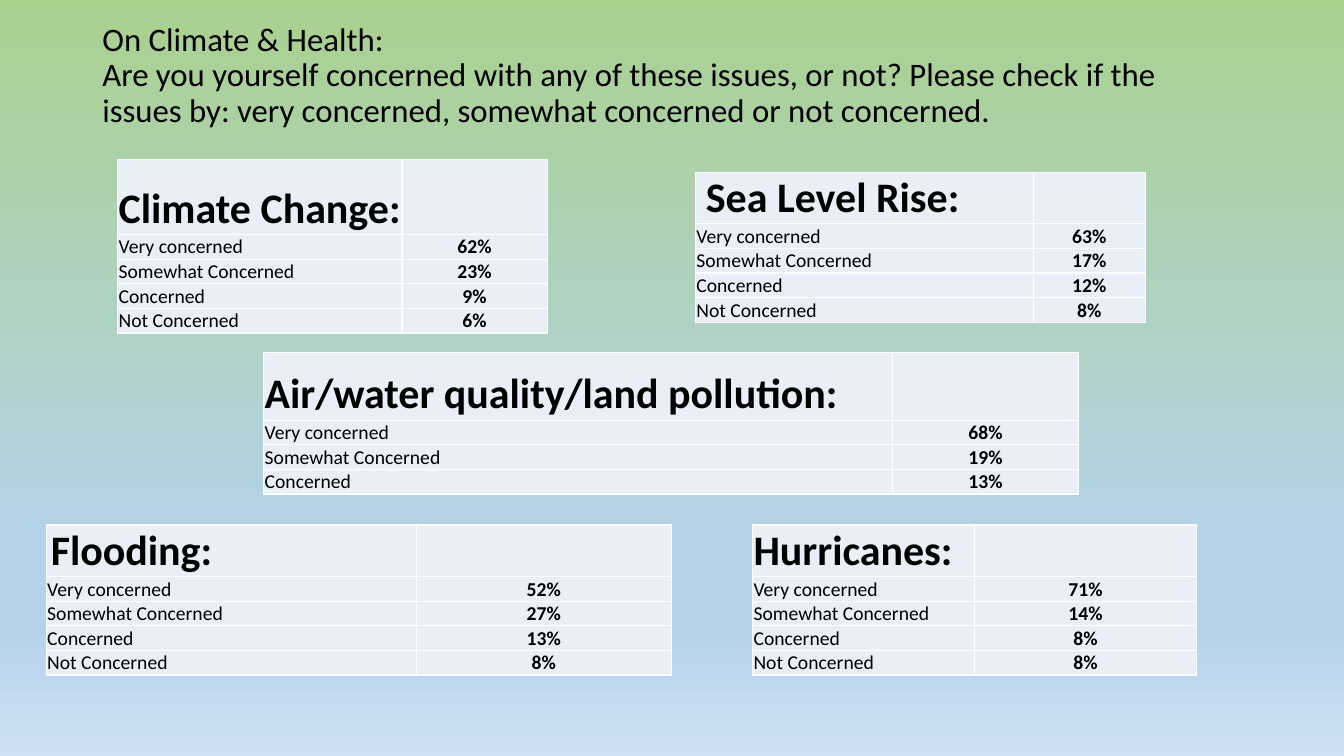
from copy import deepcopy
from lxml import etree
from pptx import Presentation
from pptx.dml.color import RGBColor
from pptx.enum.text import MSO_ANCHOR, PP_ALIGN
from pptx.oxml.ns import qn
from pptx.util import Cm, Pt

LEFT, MID = PP_ALIGN.LEFT, PP_ALIGN.CENTER
BASE, CENTER = MSO_ANCHOR.BOTTOM, MSO_ANCHOR.MIDDLE
COLORS = {"ink": "000000", "cell": "EAEFF7", "edge": "FFFFFF",
          "green": "A9D18E", "blue": "B5D2EC", "pale": "CEE1F2"}
ROW = 0.62


def write(frame, text, size=14, bold=False, align=LEFT, space=1.0):
    para = frame.paragraphs[0]
    para.text = text
    para.alignment = align
    para.line_spacing = space
    for run in para.runs:
        run.font.name = "Calibri"
        run.font.size = Pt(size)
        run.font.bold = bold
        run.font.color.rgb = RGBColor.from_string(COLORS["ink"])


def style(cell):
    cell.margin_left = cell.margin_right = cell.margin_top = Cm(0.02)
    cell.margin_bottom = Cm(0)
    cell.vertical_anchor = BASE
    props = cell._tc.get_or_add_tcPr()
    for side in ("lnL", "lnR", "lnT", "lnB"):
        line = etree.SubElement(props, qn("a:" + side), w=str(Pt(1)))
        paint = etree.SubElement(line, qn("a:solidFill"))
        etree.SubElement(paint, qn("a:srgbClr"), val=COLORS["edge"])
    cell.fill.solid()
    cell.fill.fore_color.rgb = RGBColor.from_string(COLORS["cell"])


deck = Presentation()
deck.slide_width, deck.slide_height = Cm(33.87), Cm(19.05)
slide = deck.slides.add_slide(deck.slide_layouts[6])

fill = slide.background.fill
fill.gradient()
fill.gradient_angle = 270
stops = slide._element.find(".//" + qn("a:gsLst"))
for _ in range(2):
    stops.append(deepcopy(stops[0]))
shades = [(0, "green"), (0.74, "blue"), (0.83, "blue"), (1, "pale")]
for stop, (place, name) in zip(fill.gradient_stops, shades):
    stop.position = place
    stop.color.rgb = RGBColor.from_string(COLORS[name])

title = slide.shapes.add_textbox(Cm(2.33), Cm(1.02), Cm(29.21), Cm(1.8))
title.text_frame.word_wrap = True
title.text_frame.vertical_anchor = CENTER
write(title.text_frame,
      "On Climate & Health:\vAre you yourself concerned with any of these "
      "issues, or not? Please check if the issues by: very concerned, "
      "somewhat concerned or not concerned.", size=23.4, space=0.9)

LEVELS = ["Very concerned", "Somewhat Concerned", "Concerned", "Not Concerned"]
POLLS = [
    ("Flooding:", 1.17, 13.23, (9.32, 6.43), 1.3, 0.11, (52, 27, 13, 8)),
    ("Air/water quality/land pollution:", 6.65, 8.89, (15.85, 4.67), 1.7, 0.02,
     (68, 19, 13)),
    ("Climate Change:", 2.97, 4.01, (7.16, 3.66), 1.9, 0.02, (62, 23, 9, 6)),
    ("Hurricanes:", 18.97, 13.23, (5.59, 5.59), 1.3, 0.02, (71, 14, 8, 8)),
    ("Sea Level Rise:", 17.53, 4.34, (8.51, 2.82), 1.3, 0.26, (63, 17, 12, 8)),
]

for head, left, top, widths, height, inset, shares in POLLS:
    count = len(shares)
    grid = slide.shapes.add_table(
        count + 1, 2, Cm(left), Cm(top), Cm(sum(widths)),
        Cm(height + ROW * count)).table
    grid.first_row = grid.horz_banding = False
    for col, width in zip(grid.columns, widths):
        col.width = Cm(width)
    for row in grid.rows:
        row.height = Cm(ROW)
    grid.rows[0].height = Cm(height)
    for cell in grid.iter_cells():
        style(cell)
    grid.cell(0, 0).margin_left = Cm(inset)
    write(grid.cell(0, 0).text_frame, head, size=30, bold=True)
    for i, (level, share) in enumerate(zip(LEVELS, shares), 1):
        write(grid.cell(i, 0).text_frame, level)
        write(grid.cell(i, 1).text_frame, f"{share}%", bold=True, align=MID)

deck.save("out.pptx")
